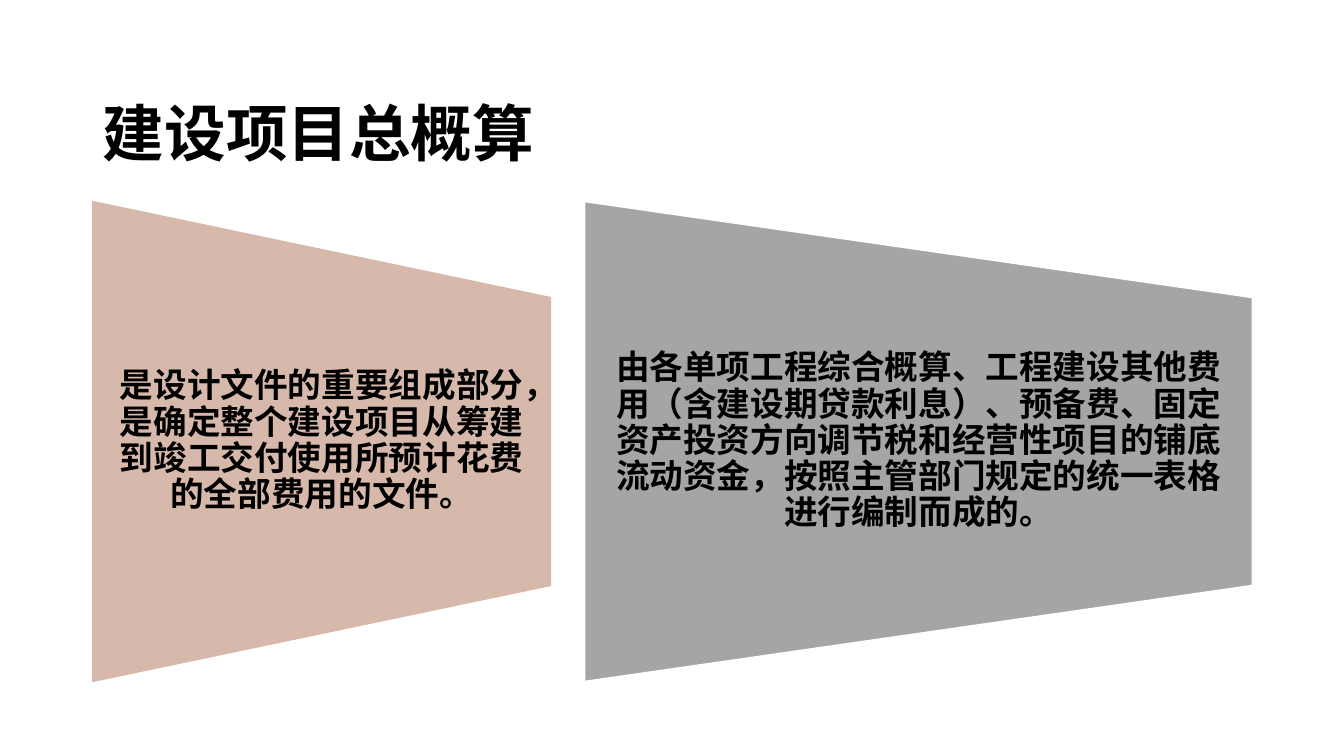
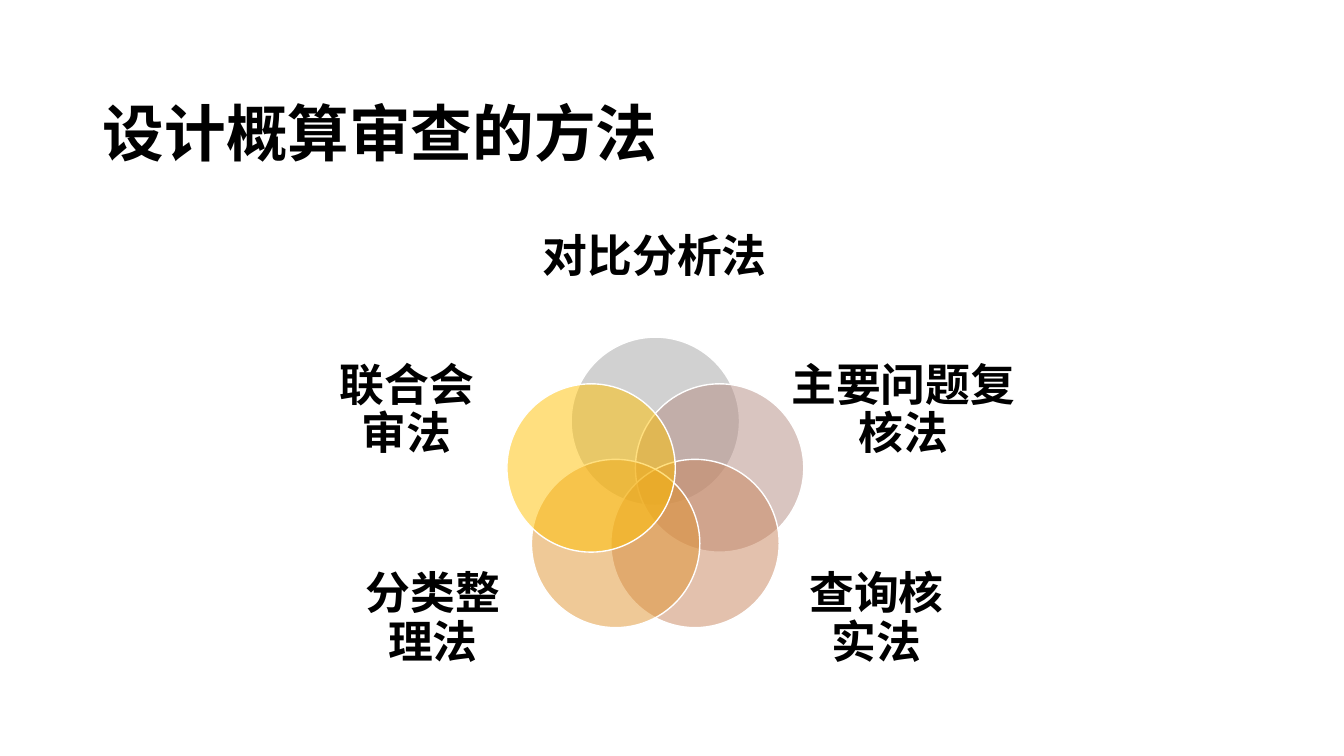
import math
from dataclasses import dataclass

from lxml import etree
from pptx import Presentation
from pptx.dml.color import RGBColor
from pptx.enum.shapes import MSO_SHAPE
from pptx.enum.text import MSO_ANCHOR, MSO_AUTO_SIZE, PP_ALIGN
from pptx.oxml.ns import qn
from pptx.util import Inches, Pt

TRAPEZOID, OVAL = MSO_SHAPE.FLOWCHART_MANUAL_OPERATION, MSO_SHAPE.OVAL
CENTER, JUSTIFY = PP_ALIGN.CENTER, PP_ALIGN.JUSTIFY
MIDDLE, NO_FIT = MSO_ANCHOR.MIDDLE, MSO_AUTO_SIZE.NONE


@dataclass(frozen=True)
class Theme:
    ink: str = "000000"
    white: str = "FFFFFF"
    rose: str = "D7B9AB"
    gray: str = "A5A5A5"
    clay: str = "B48C83"
    copper: str = "C9855C"
    amber: str = "E19430"
    gold: str = "FFC000"
    latin: str = "Times New Roman"
    cjk: str = "Noto Sans CJK SC"
    title_pt: int = 44
    label_pt: int = 32
    body_pt: int = 24


T = Theme()


@dataclass(frozen=True)
class Box:
    left: float
    top: float
    width: float
    height: float

    def lengths(self):
        return [Inches(v) for v in (self.left, self.top, self.width, self.height)]


@dataclass(frozen=True)
class Panel:
    left: float
    width: float
    fill: str
    line: str
    text: str


@dataclass(frozen=True)
class Method:
    text: str
    fill: str
    box: Box


TITLE_BOX = Box(0.92, 0.4, 11.5, 1.45)

# Trapezoid panels share a middle line and a height
PANEL_MID, PANEL_HEIGHT, PANEL_TEXT_HEIGHT = 4.38, 4.76, 2.86
PANELS = [
    Panel(0.92, 4.54, T.rose, T.rose,
          "是设计文件的重要组成部分，是确定整个建设项目从筹建到竣工交付使用所预计花费的全部费用的文件。"),
    Panel(5.8, 6.62, T.gray, T.white,
          "由各单项工程综合概算、工程建设其他费用（含建设期贷款利息）、预备费、固定资产投资方向"
          "调节税和经营性项目的铺底流动资金，按照主管部门规定的统一表格进行编制而成的。"),
]

# Circles stand on a ring, clockwise from the top
RING_X, RING_Y, RING_RADIUS, DIAMETER = 6.5, 4.85, 0.67, 1.67
METHODS = [
    Method("对比分析法", T.gray, Box(4.86, 2, 3.27, 1.12)),
    Method("主要问题复核法", T.clay, Box(7.76, 3.47, 2.4, 1.21)),
    Method("查询核实法", T.copper, Box(7.83, 5.54, 1.73, 1.21)),
    Method("分类整理法", T.amber, Box(3.43, 5.54, 1.73, 1.21)),
    Method("联合会审法", T.gold, Box(3.17, 3.47, 1.73, 1.21)),
]


def write(tf, text: str, size: int, latin: str, align, spacing: float) -> None:
    tf.word_wrap = True
    tf.auto_size = NO_FIT
    tf.vertical_anchor = MIDDLE
    p = tf.paragraphs[0]
    p.alignment, p.line_spacing = align, spacing
    r = p.add_run()
    r.text = text
    r.font.size, r.font.bold, r.font.name = Pt(size), True, latin
    r.font.color.rgb = RGBColor.from_string(T.ink)
    ea = etree.SubElement(r.font._element, qn("a:ea"))
    ea.set("typeface", T.cjk)


def add_titled_slide(prs, title: str):
    s = prs.slides.add_slide(prs.slide_layouts[5])
    sp = s.shapes.title
    sp.left, sp.top, sp.width, sp.height = TITLE_BOX.lengths()
    write(sp.text_frame, title, T.title_pt, T.latin, JUSTIFY, 1.5)
    return s


def add_figure(s, kind, box: Box, fill: str, line: str, alpha: int = 100):
    sp = s.shapes.add_shape(kind, *box.lengths())
    sp.shadow.inherit = False
    sp.fill.solid()
    sp.fill.fore_color.rgb = RGBColor.from_string(fill)
    sp.line.color.rgb = RGBColor.from_string(line)
    sp.line.width = Pt(1)
    if alpha < 100:
        color = sp._element.spPr.find(qn("a:solidFill"))[0]
        etree.SubElement(color, qn("a:alpha")).set("val", str(alpha * 1000))
    return sp


def add_label(s, box: Box, text: str, size: int, side: float = 0) -> None:
    tf = s.shapes.add_textbox(*box.lengths()).text_frame
    tf.margin_left = tf.margin_right = Inches(side)
    tf.margin_top = tf.margin_bottom = 0
    write(tf, text, size, T.cjk, CENTER, 0.9)


def add_panel(s, panel: Panel) -> None:
    # The shape is turned a quarter, so its width and height swap
    mid_x = panel.left + panel.width / 2
    box = Box(mid_x - PANEL_HEIGHT / 2, PANEL_MID - panel.width / 2,
              PANEL_HEIGHT, panel.width)
    add_figure(s, TRAPEZOID, box, panel.fill, panel.line).rotation = 270
    text_box = Box(panel.left, PANEL_MID - PANEL_TEXT_HEIGHT / 2,
                   panel.width, PANEL_TEXT_HEIGHT)
    add_label(s, text_box, panel.text, T.body_pt, 0.17)


def add_method(s, method: Method, angle: float) -> None:
    left = RING_X + RING_RADIUS * math.sin(angle) - DIAMETER / 2
    top = RING_Y - RING_RADIUS * math.cos(angle) - DIAMETER / 2
    add_figure(s, OVAL, Box(left, top, DIAMETER, DIAMETER),
               method.fill, T.white, alpha=50)
    add_label(s, method.box, method.text, T.label_pt)


def main() -> None:
    prs = Presentation()
    prs.slide_width, prs.slide_height = Inches(13.33), Inches(7.5)

    # Slide 1: two panels
    s = add_titled_slide(prs, "建设项目总概算")
    for panel in PANELS:
        add_panel(s, panel)

    # Slide 2: ring of review methods
    s = add_titled_slide(prs, "设计概算审查的方法")
    for i, method in enumerate(METHODS):
        add_method(s, method, math.tau * i / len(METHODS))

    prs.save("out.pptx")


if __name__ == "__main__":
    main()
